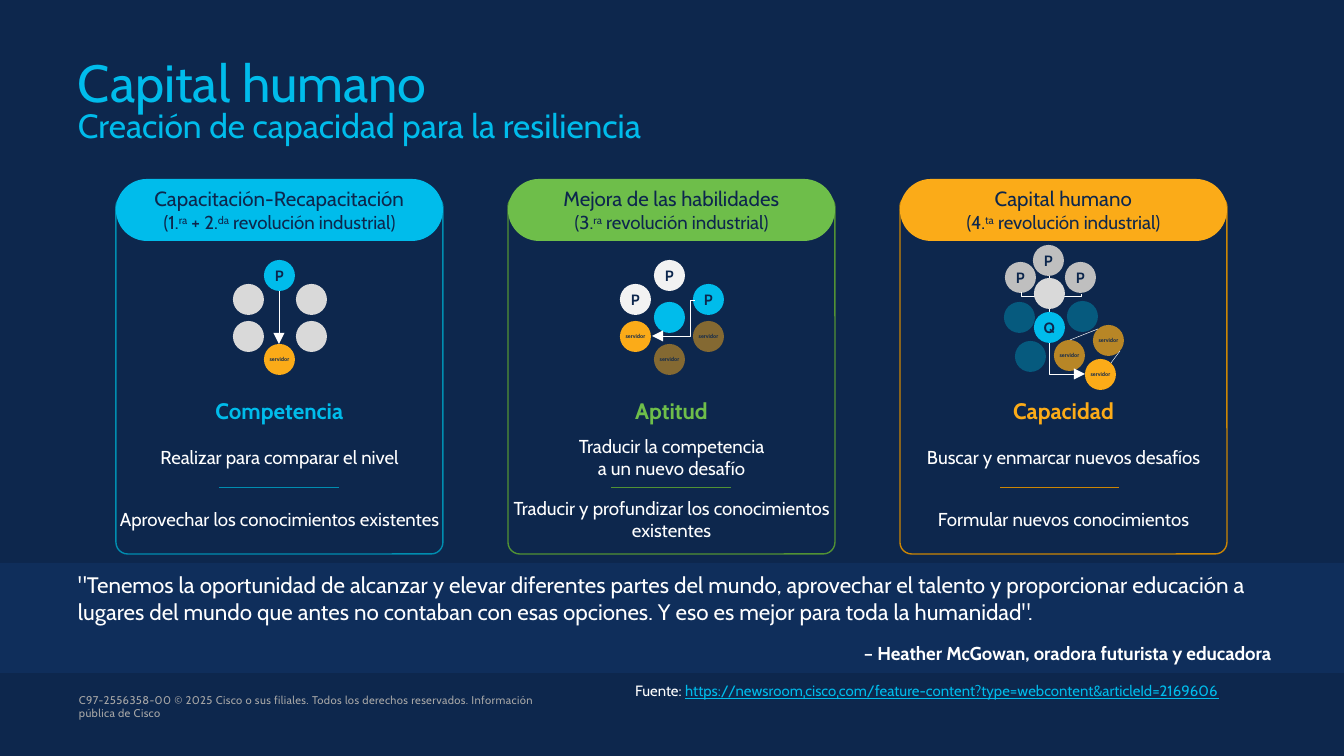
from dataclasses import dataclass

from lxml import etree
from pptx import Presentation, util as u
from pptx.dml.color import RGBColor
from pptx.enum import shapes, text
from pptx.oxml.ns import qn


@dataclass(frozen=True)
class Theme:
    font: str = "Cabin"
    navy: str = "0D274D"
    band: str = "133971"
    white: str = "FFFFFF"
    smoke: str = "F2F2F2"
    pale: str = "D9D9D9"
    silver: str = "BFBFBF"
    grey: str = "A6A6A6"
    blue: str = "00BCEB"
    teal: str = "008DB0"
    green: str = "6EBE4A"
    moss: str = "519234"
    orange: str = "FBAB18"
    amber: str = "CB8504"
    title: int = 28
    subtitle: int = 18
    label: int = 12
    header: int = 11
    body: int = 10
    small: int = 8
    legal: int = 6
    tiny: int = 3


T = Theme()
PX = 914400 / 134.4
LEFT, CENTER, RIGHT = text.PP_ALIGN.LEFT, text.PP_ALIGN.CENTER, text.PP_ALIGN.RIGHT
MIDDLE, TOP, BOTTOM = text.MSO_ANCHOR.MIDDLE, text.MSO_ANCHOR.TOP, text.MSO_ANCHOR.BOTTOM
MS = shapes.MSO_SHAPE

prs = Presentation()
prs.slide_width, prs.slide_height = round(1344 * PX), round(756 * PX)
s = prs.slides.add_slide(prs.slide_layouts[5])
s.background.fill.solid()
s.background.fill.fore_color.rgb = RGBColor.from_string(T.navy)


def add_shape(kind, box, fill, opacity=100):
    """Add a borderless preset shape, or a text box if kind is None; box is in px."""
    box = [round(v * PX) for v in box]
    if kind is None:
        return s.shapes.add_textbox(*box)
    sp = s.shapes.add_shape(kind, *box)
    sp.shadow.inherit = False
    sp.line.fill.background()
    if fill is None:
        sp.fill.background()
        return sp
    sp.fill.solid()
    sp.fill.fore_color.rgb = RGBColor.from_string(fill)
    if opacity < 100:
        clr = sp.fill._xPr.find(".//" + qn("a:srgbClr"))
        etree.SubElement(clr, qn("a:alpha"), val=str(opacity * 1000))
    return sp


def write(sp, paragraphs, size, color, bold=False, align=CENTER, anchor=MIDDLE, inset=(0, 0)):
    """Fill a shape with paragraphs, each a list of run texts in one style."""
    tf = sp.text_frame
    tf.word_wrap = True
    tf.vertical_anchor = anchor
    tf.margin_left = tf.margin_right = round(inset[0] * PX)
    tf.margin_top = tf.margin_bottom = round(inset[1] * PX)
    for i, (first, *rest) in enumerate(paragraphs):
        p = tf.add_paragraph() if i else tf.paragraphs[0]
        p.text = first
        p.alignment = align
        for part in rest:
            p.add_run().text = part
        for r in p.runs:
            r.font.name, r.font.size, r.font.bold = T.font, u.Pt(size), bold
            r.font.color.rgb = RGBColor.from_string(color)
    return tf


# Title and quote band
add_shape(MS.RECTANGLE, (0, 563, 1344, 110), T.band, 40)
title = s.shapes.title
title.left, title.top, title.width, title.height = [round(v * PX) for v in (65, 50, 1227, 107)]
tf = write(title, [["Capital humano\vCreación de capacidad para la resiliencia"]],
           T.title, T.blue, align=LEFT, inset=(13, 7))
tf.auto_size = text.MSO_AUTO_SIZE.NONE
tf.paragraphs[0].line_spacing = 0.8
tf.paragraphs[0].runs[1].font.size = u.Pt(T.subtitle)

# Cards: every second run of an era is superscript
CARD_W, PITCH = 327, 392
cards = [
    ("Capacitación-Recapacitación", ["(1.", "ra", " + 2.", "da", " revolución industrial)"],
     "Competencia", "Realizar para comparar el nivel",
     "Aprovechar los conocimientos existentes", T.blue, T.teal),
    ("Mejora de las habilidades", ["(3.", "ra", " revolución industrial)"],
     "Aptitud", "Traducir la competencia\va un nuevo desafío",
     "Traducir y profundizar los conocimientos existentes", T.green, T.moss),
    ("Capital humano", ["(4.", "ta", " revolución industrial)"],
     "Capacidad", "Buscar y enmarcar nuevos desafíos",
     "Formular nuevos conocimientos", T.orange, T.amber),
]
for i, (name, era, label, upper, lower, color, border) in enumerate(cards):
    x = 116 + i * PITCH
    card = add_shape(MS.ROUNDED_RECTANGLE, (x, 195, CARD_W, 359), None)
    card.adjustments[0] = 0.036
    card.line.color.rgb = RGBColor.from_string(border)
    card.line.width = u.Pt(0.75)
    pill = add_shape(MS.ROUNDED_RECTANGLE, (x, 179, CARD_W, 62), color)
    pill.adjustments[0] = 0.5
    tf = write(pill, [[name], era], T.header, T.navy)
    for k, r in enumerate(tf.paragraphs[1].runs):
        r.font.size = u.Pt(T.body)
        if k % 2:
            r.font._element.set("baseline", "30000")
    write(add_shape(None, (x, 397, CARD_W, 27), None), [[label]], T.label, color, bold=True)
    for y, line in ((434, upper), (496, lower)):
        write(add_shape(None, (x, y, CARD_W, 46), None), [[line]], T.body, T.white)

# Diagrams: left, top, fill, opacity, label
DOT = 31
dots = [
    (264, 260, T.blue, 100, "P"), (296, 284, T.pale, 100, ""), (296, 321, T.pale, 100, ""),
    (233, 284, T.pale, 100, ""), (233, 321, T.pale, 100, ""), (264, 344, T.orange, 100, "servidor"),

    (620, 284, T.smoke, 100, "P"), (654, 260, T.smoke, 100, "P"), (693, 284, T.blue, 100, "P"),
    (620, 321, T.orange, 100, "servidor"), (693, 321, T.orange, 50, "servidor"),
    (654, 344, T.orange, 50, "servidor"), (654, 302, T.blue, 100, ""),

    (1033, 245, T.silver, 100, "P"), (1005, 262, T.silver, 100, "P"), (1065, 262, T.silver, 100, "P"),
    (1004, 302, T.teal, 50, ""), (1015, 341, T.teal, 50, ""), (1067, 301, T.teal, 50, ""),
    (1054, 340, T.orange, 72, "servidor"), (1093, 325, T.orange, 72, "servidor"),
    (1085, 359, T.orange, 100, "servidor"),
]
front_dots = [(1034, 278, T.pale, 100, ""), (1034, 312, T.blue, 100, "Q")]

# Connectors: ends, colour, arrowhead, then preset, rotation in degrees and bend of an elbow
lines = [
    ((279, 291, 279, 344), T.white, True, None),
    ((695, 300, 652, 336), T.white, True, ("bentConnector3", 0, 0.12)),
    ((1116, 307, 1018, 343), T.white, True, ("bentConnector2", 270, None)),
    ((1052, 263, 1050, 323), T.white, False, ("bentConnector3", 270, 2.25)),
    ((1070, 340, 1098, 329), T.white, False, None),
    ((1111, 363, 1120, 351), T.white, False, None),
    ((219, 487, 339, 487), T.teal, False, None),
    ((611, 487, 731, 487), T.moss, False, None),
    ((1000, 487, 1119, 487), T.amber, False, None),
]

for layer in (dots, lines, front_dots):
    if layer is not lines:
        for x, y, fill, opacity, label in layer:
            dot = add_shape(MS.OVAL, (x, y, DOT, DOT), fill, opacity)
            if label:
                write(dot, [[label]], T.tiny if label == "servidor" else T.small, T.navy, bold=True)
        continue
    for ends, color, arrow, elbow in lines:
        kind = shapes.MSO_CONNECTOR.ELBOW if elbow else shapes.MSO_CONNECTOR.STRAIGHT
        cn = s.shapes.add_connector(kind, *[round(v * PX) for v in ends])
        cn.line.color.rgb = RGBColor.from_string(color)
        cn.line.width = u.Pt(0.25)
        spPr = cn._element.spPr
        if arrow:
            etree.SubElement(spPr.find(qn("a:ln")), qn("a:tailEnd"), type="triangle")
        etree.SubElement(spPr, qn("a:effectLst"))
        if elbow:
            preset, degrees, bend = elbow
            spPr.find(qn("a:xfrm")).set("rot", str(degrees * 60000))
            geom = spPr.find(qn("a:prstGeom"))
            geom.set("prst", preset)
            if bend is not None:
                etree.SubElement(geom.find(qn("a:avLst")), qn("a:gd"),
                                 name="adj1", fmla=f"val {round(bend * 100000)}")

# Quote, source and copyright
quote = ("\"Tenemos la oportunidad de alcanzar y elevar diferentes partes del mundo, aprovechar el "
         "talento y proporcionar educación a lugares del mundo que antes no contaban con esas "
         "opciones. Y eso es mejor para toda la humanidad\".")
tf = write(add_shape(None, (78, 571, 1193, 94), None),
           [[quote], ["– Heather McGowan, oradora futurista y educadora"]],
           T.label, T.white, align=LEFT, anchor=TOP)
tf.paragraphs[0].space_after = u.Pt(6)
p = tf.paragraphs[1]
p.alignment, p.space_before = RIGHT, u.Pt(3)
p.runs[0].font.size, p.runs[0].font.bold = u.Pt(T.body), True

url = "https://newsroomˌciscoˌcom/feature-content?type=webcontent&articleId=2169606"
tf = write(add_shape(None, (622, 675, 649, 31), None), [["Fuente: ", url]],
           T.small, T.white, align=LEFT, anchor=TOP, inset=(13, 7))
r = tf.paragraphs[0].runs[1]
r.font.underline = True
r.font.color.rgb = RGBColor.from_string(T.blue)

legal = ("C97-2556358-00 © 2025 Cisco o sus filiales. Todos los derechos reservados. "
         "Información pública de Cisco")
tf = write(add_shape(None, (70, 688, 487, 36), None), [[legal]],
           T.legal, T.grey, align=LEFT, anchor=BOTTOM, inset=(9, 4))
tf.paragraphs[0].runs[0].font._element.set("spc", "20")

prs.save("out.pptx")
